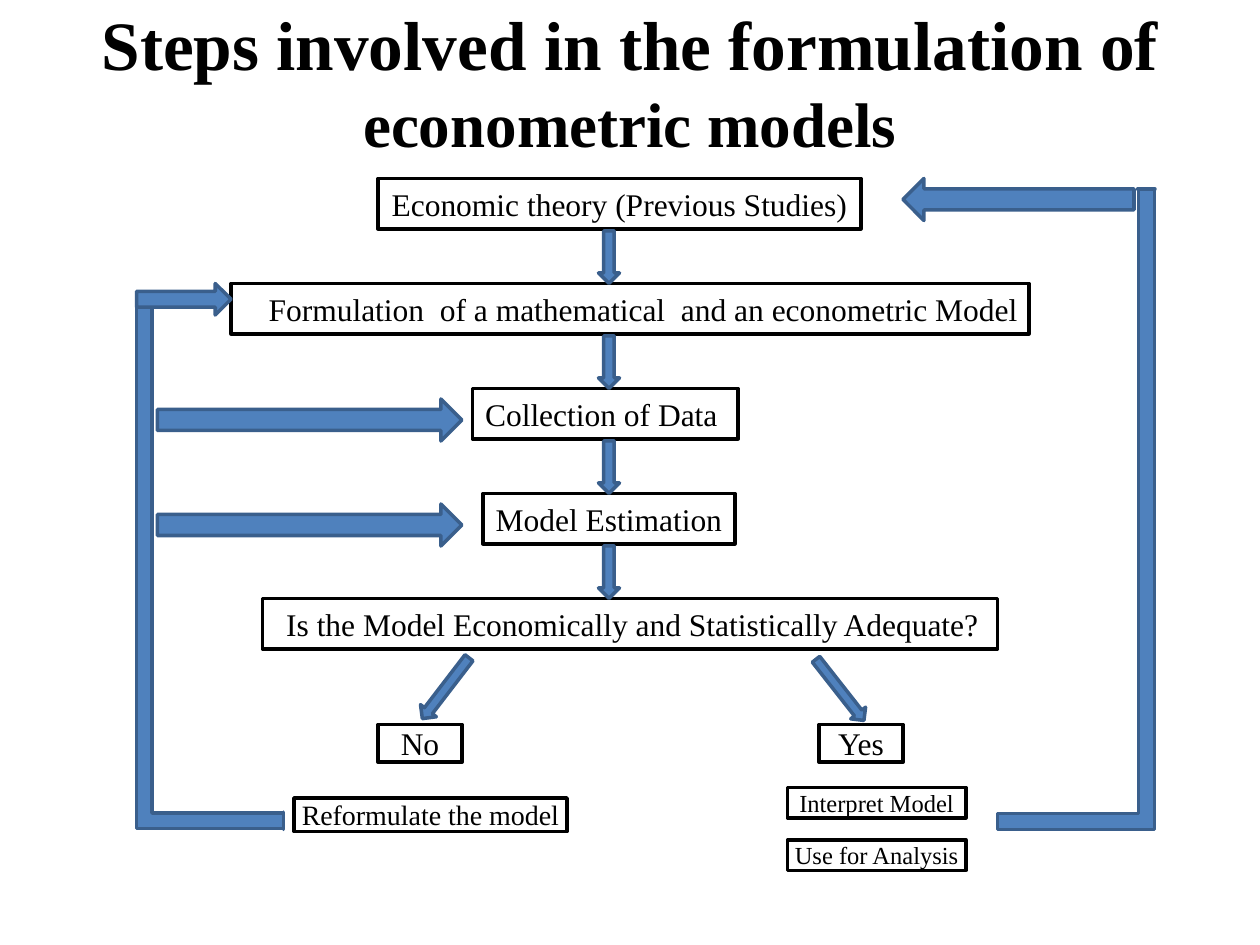
from dataclasses import dataclass

from pptx import Presentation
from pptx import util as u
from pptx.dml.color import RGBColor
from pptx.enum import shapes, text

COLUMNS, ROWS = 120, 90
CELL = u.Inches(10) / COLUMNS
FIRST_ROW, STEP_PITCH, STEP_HEIGHT = 17, 10, 4.8


@dataclass(frozen=True)
class Theme:
    font: str = "Times New Roman"
    ink: RGBColor = RGBColor(0, 0, 0)
    paper: RGBColor = RGBColor(255, 255, 255)
    arrow_fill: RGBColor = RGBColor(0x4F, 0x81, 0xBD)
    arrow_line: RGBColor = RGBColor(0x3A, 0x5F, 0x8C)
    line_width: float = 2
    title: float = 39.6
    title_end: float = 36
    step: float = 18
    outcome: float = 16
    result: float = 14


THEME = Theme()


@dataclass(frozen=True)
class Area:
    column: float
    row: float
    width: float
    height: float

    def lengths(self) -> list[int]:
        return [round(cells * CELL) for cells in (self.column, self.row, self.width, self.height)]


@dataclass(frozen=True)
class Box:
    label: str
    area: Area
    size: float = THEME.step
    inset: float = 0
    indent: float = 0
    align: text.PP_ALIGN = text.PP_ALIGN.CENTER


@dataclass(frozen=True)
class Arrow:
    kind: shapes.MSO_SHAPE
    area: Area
    rotation: float = 0
    adjustments: tuple[float, ...] = ()


def step(order: int, label: str, column: float, width: float, indent: float = 0,
         align: text.PP_ALIGN = text.PP_ALIGN.CENTER) -> Box:
    row = FIRST_ROW + order * STEP_PITCH
    return Box(label, Area(column, row, width, STEP_HEIGHT), inset=0.1, indent=indent, align=align)


STEPS = [
    step(0, "Economic theory (Previous Studies)", 36, 46),
    step(1, "Formulation  of a mathematical  and an econometric Model", 22, 76,
         0.2, text.PP_ALIGN.LEFT),
    step(2, "Collection of Data ", 45, 25.3),
    step(3, "Model Estimation", 46, 24),
    step(4, "Is the Model Economically and Statistically Adequate?", 25, 70, 0.04),
]
OUTCOMES = [
    Box("No", Area(36, 69, 8, 3.6)),
    Box("Yes", Area(78, 69, 8, 3.6)),
    Box("Reformulate the model", Area(28, 76, 26, 3.2), THEME.outcome),
    Box("Interpret Model", Area(75, 75, 17, 2.9), THEME.result),
    Box("Use for Analysis", Area(75, 80, 17, 2.9), THEME.result),
]
KIND = shapes.MSO_SHAPE
STEP_ARROWS = [
    Arrow(KIND.DOWN_ARROW, Area(57, FIRST_ROW + 5 + order * STEP_PITCH, 2, 5))
    for order in range(len(STEPS) - 1)
]
BRANCH_ARROWS = [
    Arrow(KIND.LEFT_ARROW, Area(38.8, 64.6, 7.3, 1.9), 307.5),
    Arrow(KIND.LEFT_ARROW, Area(76.3, 64.8, 7.4, 1.8), 231.9),
]
RETURN_ARROWS = [
    Arrow(KIND.BENT_UP_ARROW, Area(95, 18, 15, 61), adjustments=(0.102, 0.055, 0)),
    Arrow(KIND.LEFT_ARROW, Area(86, 17, 22, 4)),
    Arrow(KIND.BENT_UP_ARROW, Area(-5, 47, 50, 14), 90, (0.105, 0.059, 0)),
    Arrow(KIND.RIGHT_ARROW, Area(13, 27, 9, 3)),
    Arrow(KIND.RIGHT_ARROW, Area(15, 38, 29, 4)),
    Arrow(KIND.RIGHT_ARROW, Area(15, 48, 29, 4)),
]


def add_outlined(slide, kind: shapes.MSO_SHAPE, area: Area, fill: RGBColor, line: RGBColor):
    shape = slide.shapes.add_shape(kind, *area.lengths())
    shape.shadow.inherit = False
    shape.fill.solid()
    shape.fill.fore_color.rgb = fill
    shape.line.color.rgb = line
    shape.line.width = u.Pt(THEME.line_width)
    return shape


def format_run(run, size: float, bold: bool = False) -> None:
    run.font.name = THEME.font
    run.font.size = u.Pt(size)
    run.font.bold = bold
    run.font.color.rgb = THEME.ink


def draw_box(slide, box: Box) -> None:
    shape = add_outlined(slide, KIND.RECTANGLE, box.area, THEME.paper, THEME.ink)
    frame = shape.text_frame
    frame.text = box.label
    frame.word_wrap = False
    frame.vertical_anchor = text.MSO_ANCHOR.MIDDLE
    frame.margin_left = frame.margin_right = u.Inches(box.inset)
    frame.margin_top = frame.margin_bottom = u.Inches(box.inset / 2)
    paragraph = frame.paragraphs[0]
    paragraph.alignment = box.align
    if box.indent:
        paragraph._p.get_or_add_pPr().set("marL", str(u.Inches(box.indent)))
    format_run(paragraph.runs[0], box.size)


def draw_arrow(slide, arrow: Arrow) -> None:
    shape = add_outlined(slide, arrow.kind, arrow.area, THEME.arrow_fill, THEME.arrow_line)
    shape.rotation = arrow.rotation
    for index, value in enumerate(arrow.adjustments):
        shape.adjustments[index] = value


def draw_title(slide) -> None:
    frame = slide.shapes.add_textbox(*Area(6, 2, 108, 11.4).lengths()).text_frame
    frame.word_wrap = True
    frame.vertical_anchor = text.MSO_ANCHOR.MIDDLE
    paragraph = frame.paragraphs[0]
    paragraph.alignment = text.PP_ALIGN.CENTER
    for words, size in (("Steps involved in the formulation of ", THEME.title),
                        ("econometric models", THEME.title_end)):
        run = paragraph.add_run()
        run.text = words
        format_run(run, size, bold=True)


def main() -> None:
    presentation = Presentation()
    presentation.slide_width = round(COLUMNS * CELL)
    presentation.slide_height = round(ROWS * CELL)
    slide = presentation.slides.add_slide(presentation.slide_layouts[6])
    draw_title(slide)
    for box in STEPS + OUTCOMES:
        draw_box(slide, box)
    for arrow in STEP_ARROWS + BRANCH_ARROWS + RETURN_ARROWS:
        draw_arrow(slide, arrow)
    presentation.save("out.pptx")


if __name__ == "__main__":
    main()
